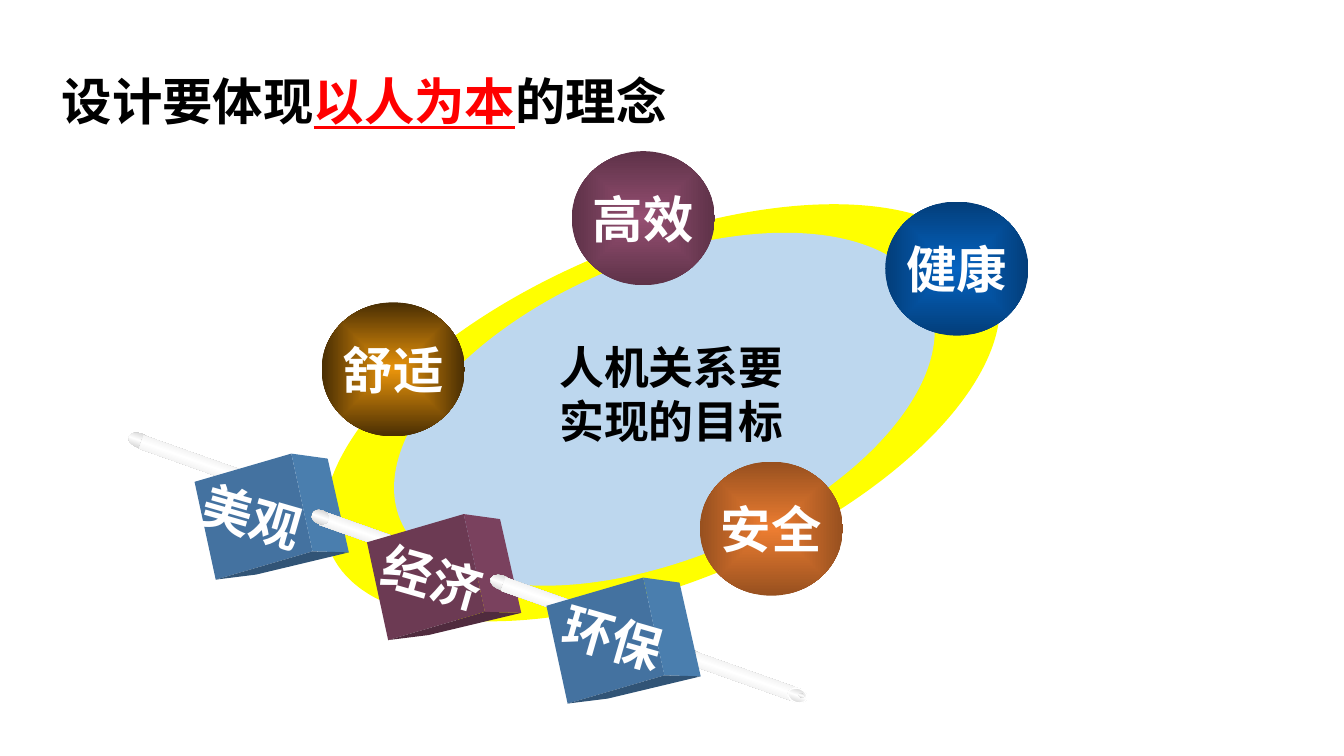
from pptx import Presentation
from pptx.dml.color import RGBColor
from pptx.enum.shapes import MSO_SHAPE
from pptx.enum.text import MSO_ANCHOR, MSO_AUTO_SIZE, PP_ALIGN
from pptx.oxml import parse_xml
from pptx.oxml.ns import nsdecls, qn
from pptx.util import Inches, Pt

BLACK = RGBColor(0x00, 0x00, 0x00)
WHITE = RGBColor(0xFF, 0xFF, 0xFF)
RED = RGBColor(0xFF, 0x00, 0x00)
YELLOW = RGBColor(0xFF, 0xFF, 0x00)
PALE_BLUE = RGBColor(0xBD, 0xD7, 0xEE)
SILVER = RGBColor(0xB6, 0xB6, 0xB6)
BLUE_FACES = (RGBColor(0x44, 0x72, 0xA0), RGBColor(0x4A, 0x7E, 0xAE), RGBColor(0x31, 0x54, 0x76))
PLUM_FACES = (RGBColor(0x6C, 0x3A, 0x53), RGBColor(0x7A, 0x41, 0x5E), RGBColor(0x50, 0x2B, 0x3E))
CJK_FONT = "Noto Sans CJK SC"

presentation = Presentation()
presentation.slide_width = Inches(13.33)
presentation.slide_height = Inches(7.5)
slide = presentation.slides.add_slide(presentation.slide_layouts[6])


def add_figure(preset, box, colors, rotation=0):
    shape = slide.shapes.add_shape(preset, *[Inches(value) for value in box])
    shape.shadow.inherit = False
    shape.rotation = rotation
    shape.line.fill.background()
    if len(colors) == 1:
        shape.fill.solid()
        shape.fill.fore_color.rgb = colors[0]
        return shape
    shape.fill.gradient()
    stops = "".join(
        f'<a:gs pos="{100000 * index // (len(colors) - 1)}"><a:srgbClr val="{color}"/></a:gs>'
        for index, color in enumerate(colors)
    )
    direction = '<a:lin ang="5400000" scaled="1"/>'
    if len(colors) == 2:
        direction = ('<a:path path="shape"><a:fillToRect l="50000" t="50000" '
                     'r="50000" b="50000"/></a:path>')
    gradient = shape._element.spPr.find(qn("a:gradFill"))
    gradient.getparent().replace(gradient, parse_xml(
        f'<a:gradFill {nsdecls("a")} rotWithShape="1"><a:gsLst>{stops}</a:gsLst>'
        f'{direction}</a:gradFill>'))
    return shape


def write_text(shape, runs, size, alignment, font_name="Arial", wrap=False):
    frame = shape.text_frame
    frame.word_wrap = wrap
    paragraph = frame.paragraphs[0]
    paragraph.alignment = alignment
    for text, color, underline in runs:
        run = paragraph.add_run()
        run.text = text
        run.font.size = Pt(size)
        run.font.bold = True
        run.font.underline = underline
        run.font.color.rgb = color
        run.font.name = font_name
        run.font._element.append(
            parse_xml(f'<a:ea {nsdecls("a")} typeface="{CJK_FONT}"/>'))
    return paragraph


RODS = [(1.27, 4.3, 1), (6.75, 6.45, 1), (3.09, 5.06, 0.76), (4.86, 5.71, 1)]
CUBES = [
    ("美观", 1.93, 4.5, BLUE_FACES, 1.88, 4.77),
    ("经济", 3.64, 5.1, PLUM_FACES, 3.67, 5.37),
    ("环保", 5.42, 5.73, BLUE_FACES, 5.46, 5.97),
]
FACES = [
    [(0, 0.28), (0.96, 0), (1.17, 0.97), (0.21, 1.25)],
    [(0.96, 0), (1.32, 0.05), (1.53, 0.98), (1.17, 0.97)],
    [(0.21, 1.25), (1.17, 0.97), (1.53, 0.98), (0.61, 1.2)],
]
ROD_PARTS = [
    (MSO_SHAPE.OVAL, 0, 0, 0.23, 0.14, False),
    (MSO_SHAPE.RECTANGLE, 0.1, 0.2, 1.11, 0.14, False),
    (MSO_SHAPE.OVAL, 1.06, 0.38, 0.2, 0.14, True),
    (MSO_SHAPE.OVAL, 1.17, 0.43, 0.06, 0.04, False),
]
BALLS = [
    ("高效", 5.67, 1.5, "954F72", "5E3248"),
    ("安全", 6.94, 4.58, "ED7D31", "97501F"),
    ("舒适", 3.19, 3, "E9940B", "492E03"),
    ("健康", 8.78, 2, "0563C1", "033E7A"),
]

layers = [("rod", RODS[0]), ("rod", RODS[1]), ("ring", None), ("cube", CUBES[0]),
          ("rod", RODS[2]), ("cube", CUBES[1]), ("rod", RODS[3]), ("cube", CUBES[2])]
for kind, item in layers:
    if kind == "ring":
        add_figure(MSO_SHAPE.OVAL, (3, 2.42, 7.13, 3.35), [YELLOW], 337.3)
        add_figure(MSO_SHAPE.OVAL, (3.75, 2.58, 5.68, 2.96), [PALE_BLUE], 337.3)
    elif kind == "rod":
        left, top, scale = item
        parts = ROD_PARTS
        if scale < 1:
            parts = [ROD_PARTS[1], ROD_PARTS[0], *ROD_PARTS[2:]]
        for preset, x, y, width, height, outlined in parts:
            box = (left + x * scale, top + y * scale, width * scale, height)
            part = add_figure(preset, box, [SILVER, WHITE, SILVER], 19.5)
            if outlined:
                part.line.color.rgb = WHITE
                part.line.width = Pt(1)
    else:
        left, top, colors = item[1:4]
        for points, color in zip(FACES, colors):
            corners = [(Inches(left + x), Inches(top + y)) for x, y in points]
            builder = slide.shapes.build_freeform(*corners[0])
            builder.add_line_segments(corners[1:], close=True)
            face = builder.convert_to_shape()
            face.shadow.inherit = False
            face.fill.solid()
            face.fill.fore_color.rgb = color
            face.line.fill.background()

for label, left, top, center_color, edge_color in BALLS:
    colors = [RGBColor.from_string(center_color), RGBColor.from_string(edge_color)]
    ball = add_figure(MSO_SHAPE.OVAL, (left, top, 1.42, 1.33), colors)
    ball.text_frame.vertical_anchor = MSO_ANCHOR.MIDDLE
    write_text(ball, [(label, WHITE, None)], 36, PP_ALIGN.CENTER, CJK_FONT)

for label, *_, left, top in CUBES:
    caption = slide.shapes.add_textbox(Inches(left), Inches(top), Inches(1.22), Inches(0.71))
    caption.rotation = 16.1
    caption.text_frame.auto_size = MSO_AUTO_SIZE.SHAPE_TO_FIT_TEXT
    write_text(caption, [(label, WHITE, None)], 36, PP_ALIGN.RIGHT)

title = slide.shapes.add_textbox(Inches(0.43), Inches(0.71), Inches(6.28), Inches(0.65))
title.text_frame.auto_size = MSO_AUTO_SIZE.SHAPE_TO_FIT_TEXT
title_runs = [("设计要体现", BLACK, None), ("以人为本", RED, True), ("的理念", BLACK, None)]
title_paragraph = write_text(title, title_runs, 36, PP_ALIGN.RIGHT)
title_paragraph.line_spacing = 0.9

goal = slide.shapes.add_textbox(Inches(5.12), Inches(3.32), Inches(2.75), Inches(1.17))
goal.text_frame.auto_size = MSO_AUTO_SIZE.SHAPE_TO_FIT_TEXT
write_text(goal, [("人机关系要实现的目标", BLACK, None)], 32, PP_ALIGN.RIGHT, wrap=True)

presentation.save("out.pptx")
